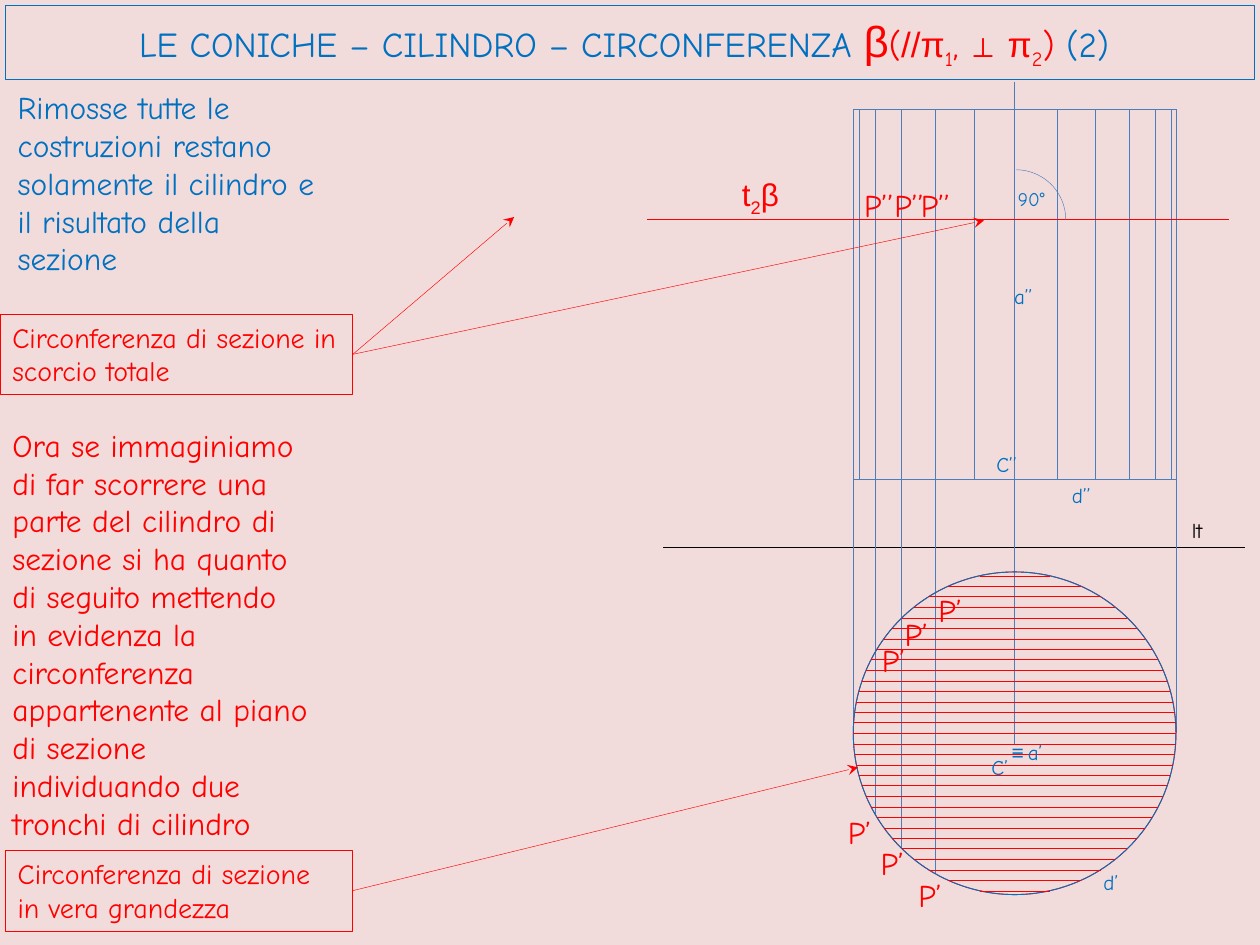
import math

import lxml.etree
import pptx
import pptx.dml.color
import pptx.enum.shapes
import pptx.enum.text
import pptx.oxml.ns
import pptx.util

Pt = pptx.util.Pt
SHAPE = pptx.enum.shapes.MSO_SHAPE
ANCHOR = pptx.enum.text.MSO_ANCHOR
ALIGN = pptx.enum.text.PP_ALIGN

RED, BLUE, THIN_BLUE, BLACK = "FF0000", "0070C0", "4B7EBC", "000000"
BACKGROUND = "F2DCDB"
HAND, PLAIN = "Comic Neue", "Arial"

# Cylinder: elevation above the ground line, plan below it
AXIS_X, PLAN_Y, RADIUS = 579.8, 419, 92.2
LEFT, RIGHT = AXIS_X - RADIUS, AXIS_X + RADIUS
TOP_Y, SECTION_Y, BASE_Y, GROUND_Y = 62.5, 125.3, 273.7, 312.5
GENERATORS = [LEFT, 491, 500.4, 514.8, 534.2, 556.6,
              604.1, 625.7, 645.5, 659.9, 669.2, RIGHT]
PROJECTIONS = [(LEFT, PLAN_Y), (500.4, 466), (514.8, 484.6),
               (534.2, 499), (RIGHT, PLAN_Y)]
HATCH_STEP, HATCH_COUNT = 6, 31


def rgb(color):
    return pptx.dml.color.RGBColor.from_string(color)


def set_line(line, color, width):
    line.color.rgb = rgb(color)
    line.width = Pt(width)


def add_line(slide, start, end, color=THIN_BLUE):
    line = slide.shapes.add_connector(
        pptx.enum.shapes.MSO_CONNECTOR.STRAIGHT, *map(Pt, start + end))
    set_line(line.line, color, 0.25)
    lxml.etree.SubElement(line._element.spPr, pptx.oxml.ns.qn("a:effectLst"))
    return line


def add_outline(slide, preset, box, color, width=0.25):
    """Add an unfilled preset shape."""
    outline = slide.shapes.add_shape(preset, *map(Pt, box))
    outline.shadow.inherit = False
    outline.fill.background()
    set_line(outline.line, color, width)
    return outline


def write(frame, runs, align=ALIGN.LEFT, anchor=ANCHOR.TOP):
    """Fill a text frame; each run is (text, size, font, color[, extras])."""
    frame.word_wrap = True
    frame.vertical_anchor = anchor
    paragraph = frame.paragraphs[0]
    paragraph.alignment = align
    for text, size, font, color, *extras in runs:
        run = paragraph.add_run()
        run.text = text
        values = {"size": Pt(size), "name": font, "bold": "bold" in extras}
        for key, value in values.items():
            setattr(run.font, key, value)
        run.font.color.rgb = rgb(color)
        if "sub" in extras:
            run._r.get_or_add_rPr().set("baseline", "-25000")


def add_text(slide, box, *runs):
    write(slide.shapes.add_textbox(*map(Pt, box)).text_frame, runs)


def add_callout(slide, box, text, targets):
    """Add a framed note with an arrow from its right side to each target."""
    note = add_outline(slide, SHAPE.RECTANGLE, box, RED)
    write(note.text_frame, [(text, 16, HAND, RED)])
    left, top, width, height = box
    for target in targets:
        arrow = add_line(slide, (left + width, top + height / 2), target, RED)
        arrow.begin_connect(note, 3)
        lxml.etree.SubElement(arrow.line._get_or_add_ln(),
                              pptx.oxml.ns.qn("a:tailEnd"), type="stealth")


def add_title(slide):
    title = add_outline(slide, SHAPE.RECTANGLE, (3, 3, 714, 42.5), BLUE)
    write(title.text_frame, [
        ("LE CONICHE – CILINDRO – CIRCONFERENZA ", 20, HAND, BLUE),
        ("β", 24.8, PLAIN, RED),
        ("(", 20, HAND, RED),
        ("//π", 20, PLAIN, RED),
        ("1", 20, HAND, RED, "sub"),
        (",", 20, HAND, RED),
        (" ⊥ ", 18, PLAIN, RED, "bold"),
        ("π", 20, PLAIN, RED),
        ("2", 20, HAND, RED, "sub"),
        (") ", 20, HAND, RED),
        ("(2) ", 20, HAND, BLUE),
    ], ALIGN.CENTER, ANCHOR.MIDDLE)


def add_cylinder(slide):
    add_line(slide, (379, GROUND_Y), (711.5, GROUND_Y), BLACK)
    for x, end_y in PROJECTIONS:
        add_line(slide, (x, BASE_Y), (x, end_y))
    for y in (TOP_Y, BASE_Y):
        add_line(slide, (LEFT, y), (RIGHT, y))
    for x in GENERATORS:
        add_line(slide, (x, TOP_Y), (x, SECTION_Y))
        add_line(slide, (x, SECTION_Y), (x, BASE_Y))
    add_line(slide, (AXIS_X, 46.8), (AXIS_X, PLAN_Y))
    add_line(slide, (AXIS_X, PLAN_Y - 7), (AXIS_X, PLAN_Y + 7))
    add_line(slide, (AXIS_X - 7, PLAN_Y), (AXIS_X + 7, PLAN_Y))
    add_line(slide, (370, SECTION_Y), (702, SECTION_Y), RED)
    add_outline(slide, SHAPE.ARC, (552, 97, 57, 57), THIN_BLUE)


def add_section_circle(slide):
    for color in (RED, BLUE):
        add_outline(slide, SHAPE.OVAL,
                    (LEFT, PLAN_Y - RADIUS, 2 * RADIUS, 2 * RADIUS), color, 0.5)
    for index in range(HATCH_COUNT):
        offset = HATCH_STEP * (index - HATCH_COUNT // 2)
        half = math.sqrt(RADIUS ** 2 - offset ** 2)
        y = PLAN_Y + offset
        add_line(slide, (AXIS_X - half, y), (AXIS_X + half, y), RED)


def add_labels(slide):
    for text, x, y in [("C’’", 562.3, 254.2), ("C’", 559.5, 427.5),
                       ("d’’", 605.5, 272.2), ("d’", 623.5, 493.2),
                       ("a’’", 572.4, 158.4), ("a’", 580.3, 419)]:
        add_text(slide, (x, y, 30, 21.6), (text, 12, HAND, BLUE))
    add_text(slide, (674, 292.3, 27.4, 21.6), ("lt", 12, HAND, BLACK))
    add_text(slide, (571, 419, 24, 21.6), ("≡", 12, PLAIN, BLUE))
    add_text(slide, (574.6, 103.7, 38.2, 20.9), ("90°", 11, HAND, BLUE))
    add_text(slide, (416.9, 96.5, 39.6, 28.8), ("t", 18, PLAIN, RED),
             ("2", 18, PLAIN, RED, "sub"), ("β", 18, PLAIN, RED))
    for x in (486.7, 504, 519.1):
        add_text(slide, (x, 103, 31, 25.2), ("P’’", 18, HAND, RED))
    for x, y in [(496.1, 478.8), (477.4, 460.8), (517.7, 496.8),
                 (509.8, 347.8), (529.2, 334.1), (496.8, 362.9)]:
        add_text(slide, (x, y, 28, 25.2), ("P’", 18, HAND, RED))


def add_explanations(slide):
    add_text(slide, (3, 46.8, 192, 116.6), (
        "Rimosse tutte le costruzioni restano solamente il cilindro e "
        "il risultato della sezione", 18, HAND, BLUE))
    add_text(slide, (0, 239.8, 184.3, 247), (
        "Ora se immaginiamo di far scorrere una parte del cilindro di sezione "
        "si ha quanto di seguito mettendo in evidenza la circonferenza "
        "appartenente al piano di sezione individuando due tronchi di cilindro",
        18, HAND, RED))
    add_callout(slide, (0, 179.5, 201.6, 46),
                "Circonferenza di sezione in scorcio totale",
                [(562.3, 126), (293.8, 124)])
    add_callout(slide, (3, 486, 198.4, 46),
                "Circonferenza di sezione in vera grandezza", [(490.3, 438.5)])


def main():
    presentation = pptx.Presentation()
    presentation.slide_width, presentation.slide_height = Pt(720), Pt(540)
    slide = presentation.slides.add_slide(presentation.slide_layouts[6])
    slide.background.fill.solid()
    slide.background.fill.fore_color.rgb = rgb(BACKGROUND)
    add_title(slide)
    add_cylinder(slide)
    add_section_circle(slide)
    add_labels(slide)
    add_explanations(slide)
    presentation.save("out.pptx")


if __name__ == "__main__":
    main()
